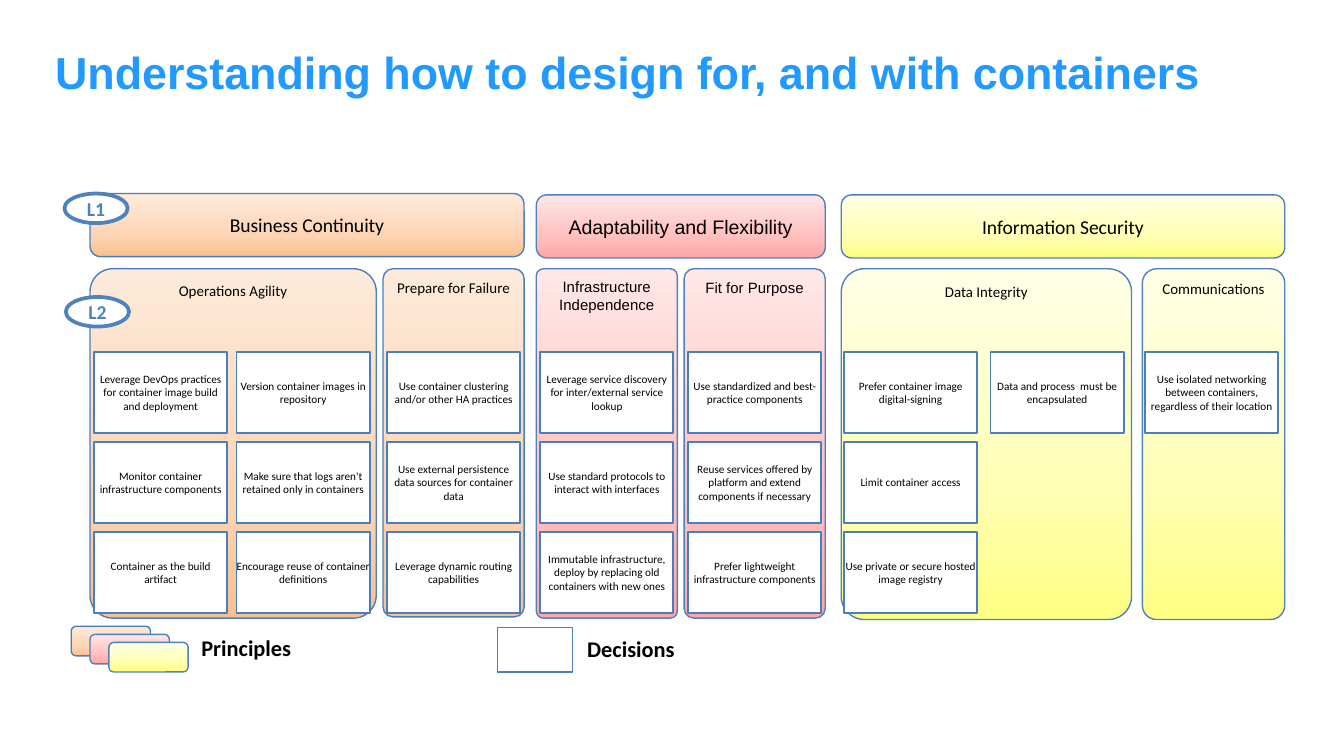
from copy import deepcopy
from dataclasses import dataclass

from pptx import Presentation
from pptx.dml.color import RGBColor
from pptx.enum.shapes import MSO_SHAPE
from pptx.enum.text import MSO_ANCHOR, MSO_AUTO_SIZE, PP_ALIGN
from pptx.oxml.ns import qn
from pptx.util import Inches, Pt

ROUND, OVAL = MSO_SHAPE.ROUNDED_RECTANGLE, MSO_SHAPE.OVAL
TOP, MIDDLE = MSO_ANCHOR.TOP, MSO_ANCHOR.MIDDLE
LEFT, CENTER = PP_ALIGN.LEFT, PP_ALIGN.CENTER
NO_FIT = MSO_AUTO_SIZE.NONE


@dataclass(frozen=True)
class Tint:
    stops: tuple[str, str, str]  # bottom to top
    line: str
    font: str


@dataclass(frozen=True)
class Theme:
    title: str = "2299FF"
    text: str = "000000"
    white: str = "FFFFFF"
    edge: str = "4B7EBC"
    badge: str = "4F81BD"
    sans: str = "Arial"
    body: str = "Calibri"
    title_pt: float = 24
    legend_pt: float = 12
    head_pt: float = 10.5
    group_pt: float = 8
    card_pt: float = 6


T = Theme()
ORANGE = Tint(("FAC090", "FCD5B5", "FDEADA"), T.edge, T.body)
RED = Tint(("FFA6A5", "FFC0BF", "FFE7E7"), T.badge, T.sans)
YELLOW = Tint(("FFFF81", "FFFFB3", "FFFFE7"), T.badge, T.body)


@dataclass(frozen=True)
class Box:
    x: float
    y: float
    w: float
    h: float


@dataclass(frozen=True)
class Head:
    text: str
    box: Box
    tint: Tint


@dataclass(frozen=True)
class Stack:
    x: float
    cards: tuple[str, ...]


@dataclass(frozen=True)
class Group:
    text: str
    box: Box
    bend: float
    tint: Tint
    stacks: tuple[Stack, ...]


HEADS = (
    Head("Business Continuity", Box(0.67, 1.44, 3.23, 0.47), ORANGE),
    Head("Adaptability and Flexibility", Box(3.99, 1.45, 2.15, 0.47), RED),
    Head("Information Security", Box(6.26, 1.45, 3.3, 0.47), YELLOW),
)
GROUPS = (
    Group("Operations Agility", Box(0.67, 2, 2.13, 2.6), 0.08, ORANGE, (
        Stack(0.7, ("Leverage DevOps practices for container image build and deployment",
                    "Monitor container infrastructure components",
                    "Container as the build artifact")),
        Stack(1.76, ("Version container images in repository",
                     "Make sure that logs aren't retained only in containers",
                     "Encourage reuse of container definitions")))),
    Group("Prepare for Failure", Box(2.85, 2, 1.05, 2.59), 0.07, ORANGE, (
        Stack(2.88, ("Use container clustering and/or other HA practices",
                     "Use external persistence data sources for container data",
                     "Leverage dynamic routing capabilities")),)),
    Group("Infrastructure Independence", Box(3.99, 2, 1.05, 2.6), 0.05, RED, (
        Stack(4.02, ("Leverage service discovery for inter/external service lookup",
                     "Use standard protocols to interact with interfaces",
                     "Immutable infrastructure, deploy by replacing old containers with new ones")),)),
    Group("Fit for Purpose", Box(5.09, 2, 1.05, 2.6), 0.07, RED, (
        Stack(5.12, ("Use standardized and best-practice components",
                     "Reuse services offered by platform and extend components if necessary",
                     "Prefer lightweight infrastructure components")),)),
    Group("Data Integrity", Box(6.26, 2, 2.16, 2.61), 0.08, YELLOW, (
        Stack(6.28, ("Prefer container image digital-signing",
                     "Limit container access",
                     "Use private or secure hosted image registry")),
        Stack(7.37, ("Data and process  must be encapsulated",)))),
    Group("Communications", Box(8.5, 2, 1.06, 2.61), 0.1, YELLOW, (
        Stack(8.52, ("Use isolated networking between containers, regardless of their location",)),)),
)


def rgb(code: str) -> RGBColor:
    return RGBColor.from_string(code)


def place(box: Box) -> tuple:
    return tuple(Inches(n) for n in (box.x, box.y, box.w, box.h))


def write(shape, text: str, size: float, font: str, color: str = T.text,
          bold: bool = False, align=CENTER, anchor=MIDDLE,
          pad: tuple[float, float] = (0, 0.05)):
    frame = shape.text_frame
    frame.auto_size = NO_FIT
    frame.word_wrap = True
    frame.vertical_anchor = anchor
    frame.margin_left = frame.margin_right = Inches(pad[0])
    frame.margin_top = frame.margin_bottom = Inches(pad[1])
    para = frame.paragraphs[0]
    para.alignment = align
    run = para.add_run()
    run.text = text
    run.font.size, run.font.name, run.font.bold = Pt(size), font, bold
    run.font.color.rgb = rgb(color)
    return para


def shade(shape, tint: Tint) -> None:
    """Three-stop gradient, darkest at the bottom."""
    fill = shape.fill
    fill.gradient()
    fill.gradient_angle = 90
    first = next(shape.element.spPr.iter(qn("a:gs")))
    first.addnext(deepcopy(first))
    for stop, spot, code in zip(fill.gradient_stops, (0, 0.35, 1), tint.stops):
        stop.position = spot
        stop.color.rgb = rgb(code)


def draw(slide, box: Box, line: str = T.edge, width: float = 0.75,
         tint: Tint | None = None, bend: float | None = None, kind=ROUND):
    shape = slide.shapes.add_shape(kind, *place(box))
    shape.shadow.inherit = False
    if bend is not None:
        shape.adjustments[0] = bend
    if tint:
        shade(shape, tint)
    else:
        shape.fill.solid()
        shape.fill.fore_color.rgb = rgb(T.white)
    shape.line.color.rgb = rgb(tint.line if tint else line)
    shape.line.width = Pt(width)
    return shape


def card(slide, x: float, row: int, text: str) -> None:
    shape = draw(slide, Box(x, 2.62 + 0.67 * row, 0.99, 0.6), width=1, bend=0)
    write(shape, text, T.card_pt, T.body)


def badge(slide, text: str, x: float, y: float) -> None:
    shape = draw(slide, Box(x, y, 0.47, 0.22), T.badge, 2, kind=OVAL)
    write(shape, text, T.head_pt, T.body, T.badge, True, pad=(0, 0))


def label(slide, text: str, x: float, y: float) -> None:
    shape = slide.shapes.add_textbox(*place(Box(x, y, 1.04, 0.29)))
    para = write(shape, text, T.legend_pt, T.body, bold=True, align=LEFT,
                 anchor=TOP, pad=(0.1, 0.05))
    para.space_before = Pt(6)


def main() -> None:
    deck = Presentation()
    deck.slide_width = Inches(10)
    deck.slide_height = deck.slide_width * 9 // 16
    slide = deck.slides.add_slide(deck.slide_layouts[5])

    # Title
    title = slide.shapes.title
    title.left, title.top, title.width, title.height = place(Box(0.31, 0.28, 9.25, 0.91))
    write(title, "Understanding how to design for, and with containers", T.title_pt,
          T.sans, T.title, True, LEFT, TOP, (0.1, 0.05))

    # First level: principle headings
    for head in HEADS:
        write(draw(slide, head.box, tint=head.tint), head.text, T.head_pt, head.tint.font)

    # Second level: groups with their decision cards
    for group in GROUPS:
        shape = draw(slide, group.box, tint=group.tint, bend=group.bend)
        write(shape, group.text, T.group_pt, group.tint.font, anchor=TOP, pad=(0.05, 0.05))
        for stack in group.stacks:
            for row, text in enumerate(stack.cards):
                card(slide, stack.x, row, text)

    # Level badges
    badge(slide, "L1", 0.48, 1.44)
    badge(slide, "L2", 0.49, 2.21)

    # Legend
    for step, tint in enumerate((ORANGE, RED, YELLOW)):
        draw(slide, Box(0.53 + 0.14 * step, 4.66 + 0.06 * step, 0.59, 0.22), tint=tint)
    label(slide, "Principles", 1.4, 4.67)
    draw(slide, Box(3.7, 4.67, 0.56, 0.33), bend=0)
    label(slide, "Decisions", 4.27, 4.68)

    deck.save("out.pptx")


if __name__ == "__main__":
    main()
